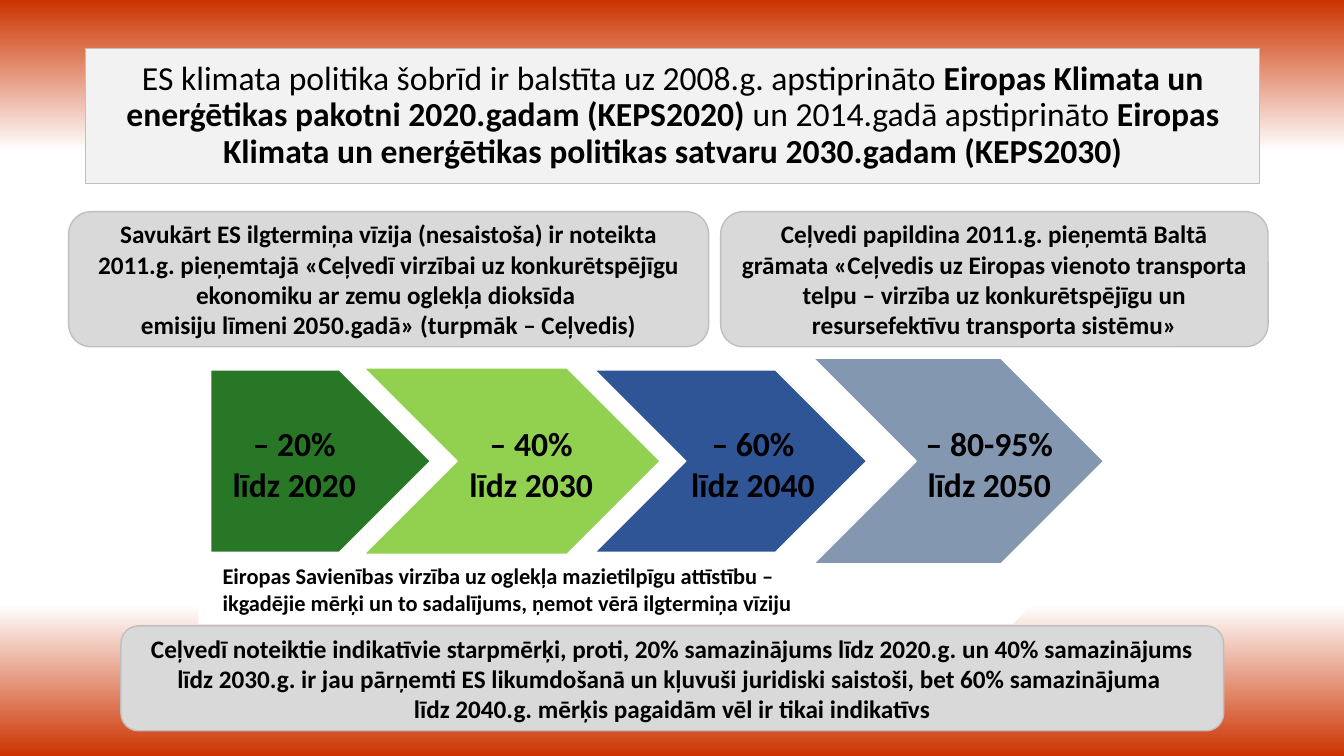
import pptx
import pptx.dml.color
import pptx.enum.shapes
import pptx.enum.text
import pptx.oxml
import pptx.oxml.ns
import pptx.util
from lxml import etree

Pt = pptx.util.Pt
qn = pptx.oxml.ns.qn
SHAPE = pptx.enum.shapes.MSO_SHAPE
ALIGN = pptx.enum.text.PP_ALIGN
ANCHOR = pptx.enum.text.MSO_ANCHOR
FIT = pptx.enum.text.MSO_AUTO_SIZE

ARROW_MIDDLE = 329.4
CARD_TOP = 151.2

TITLE_RUNS = [
    ("ES klimata politika šobrīd ir balstīta uz 2008.g. apstiprināto ", False),
    ("Eiropas Klimata un enerģētikas pakotni 2020.gadam (KEPS2020)", True),
    (" un 2014.gadā apstiprināto ", False),
    ("Eiropas Klimata un enerģētikas politikas satvaru 2030.gadam (KEPS2030)", True),
]

# Card box and its paragraphs
CARDS = [
    ((49, CARD_TOP, 457.2, 96.5), [
        "Savukārt ES ilgtermiņa vīzija (nesaistoša) ir noteikta 2011.g. pieņemtajā "
        "«Ceļvedī virzībai uz konkurētspējīgu ekonomiku ar zemu oglekļa dioksīda ",
        "emisiju līmeni 2050.gadā» (turpmāk – Ceļvedis)"]),
    ((514.8, CARD_TOP, 391, 96.5), [
        "Ceļvedi papildina 2011.g. pieņemtā Baltā grāmata «Ceļvedis uz Eiropas vienoto "
        "transporta telpu – virzība uz konkurētspējīgu un resursefektīvu transporta sistēmu»"]),
    ((86.4, 447.1, 787.7, 74.9), [
        "Ceļvedī noteiktie indikatīvie starpmērķi, proti, 20% samazinājums līdz 2020.g. "
        "un 40% samazinājums līdz 2030.g. ir jau pārņemti ES likumdošanā un kļuvuši "
        "juridiski saistoši, bet 60% samazinājuma ",
        "līdz 2040.g. mērķis pagaidām vēl ir tikai indikatīvs"]),
]

# Arrow kind, left, width, height, colour, label left, label width, target, year
STAGES = [
    (SHAPE.PENTAGON, 150.5, 157, 130.3, "277727", 154.1, 112.3, "– 20%", 2020),
    (SHAPE.CHEVRON, 259.9, 211.7, 133.2, "92D050", 323.3, 112.3, "– 40%", 2030),
    (SHAPE.CHEVRON, 424.8, 194.4, 130.3, "2F5597", 481.7, 112.3, "– 60%", 2040),
    (SHAPE.CHEVRON, 581, 207.4, 146.9, "8497B0", 646.6, 120.2, "– 80-95%", 2050),
]

CAPTION = [
    "Eiropas Savienības virzība uz oglekļa mazietilpīgu attīstību –",
    "ikgadējie mērķi un to sadalījums, ņemot vērā ilgtermiņa vīziju",
]


def rgb(value):
    return pptx.dml.color.RGBColor.from_string(value)


def paint(sp, fill, line=None, width=1):
    sp.fill.solid()
    sp.fill.fore_color.rgb = rgb(fill)
    if line:
        sp.line.color.rgb = rgb(line)
        sp.line.width = Pt(width)
    else:
        sp.line.fill.background()


def add_block(shapes, kind, box, fill, line=None):
    sp = shapes.add_shape(kind, *map(Pt, box))
    sp.shadow.inherit = False
    paint(sp, fill, line)
    return sp


def write(tf, paragraphs, size, align, spacing=None, **frame):
    """Fill a text frame; each paragraph is a list of (text, bold) runs."""
    for name, value in dict(word_wrap=True, **frame).items():
        setattr(tf, name, value)
    for i, runs in enumerate(paragraphs):
        p = tf.add_paragraph() if i else tf.paragraphs[0]
        p.alignment = align
        p.line_spacing = spacing
        for text, bold in runs:
            r = p.add_run()
            r.text = text
            for name, value in dict(name="Calibri", size=Pt(size), bold=bold).items():
                setattr(r.font, name, value)
            r.font.color.rgb = rgb("000000")


def bold_lines(lines):
    return [[(line, True)] for line in lines]


def add_label(shapes, box, lines, size, align):
    sp = shapes.add_textbox(*map(Pt, box))
    write(sp.text_frame, bold_lines(lines), size, align, auto_size=FIT.SHAPE_TO_FIT_TEXT)


def add_card(shapes, box, lines):
    sp = add_block(shapes, SHAPE.ROUNDED_RECTANGLE, box, "D9D9D9", "BFBFBF")
    write(sp.text_frame, bold_lines(lines), 18, ALIGN.CENTER, vertical_anchor=ANCHOR.MIDDLE)


def set_background(s, stops):
    fill = s.background.fill
    fill.gradient()
    fill.gradient_angle = 90
    stop_list = next(s.element.iter(qn("a:gsLst")))
    for old in list(stop_list):
        stop_list.remove(old)
    for percent, colour in stops:
        stop = etree.SubElement(stop_list, qn("a:gs"), pos=str(percent * 1000))
        etree.SubElement(stop, qn("a:srgbClr"), val=colour)


def set_title(sp, box):
    for name, value in zip(("left", "top", "width", "height"), box):
        setattr(sp, name, Pt(value))
    # Rounded outline for the placeholder
    outline = pptx.oxml.parse_xml(
        '<a:prstGeom xmlns:a="http://schemas.openxmlformats.org/drawingml/2006/main" '
        'prst="roundRect"><a:avLst><a:gd name="adj" fmla="val 18400"/></a:avLst></a:prstGeom>')
    sp.element.spPr.find(qn("a:xfrm")).addnext(outline)
    paint(sp, "F2F2F2", "BFBFBF", 0.75)
    write(sp.text_frame, [TITLE_RUNS], 24, ALIGN.CENTER, spacing=0.9,
          auto_size=FIT.NONE, vertical_anchor=ANCHOR.MIDDLE)


def add_roadmap(s):
    shapes = s.shapes.add_group_shape().shapes
    add_block(shapes, SHAPE.PENTAGON, (141.8, 255.6, 676.8, 190.1), "FFFFFF")
    for kind, left, width, height, colour, *_ in STAGES:
        box = (left, ARROW_MIDDLE - height / 2, width, height)
        add_block(shapes, kind, box, colour, "FFFFFF")
    for *_, left, width, target, year in STAGES:
        add_label(shapes, (left, 298.8, width, 65.5), [target, f"līdz {year}"], 24, ALIGN.CENTER)
    add_label(shapes, (151.9, 398.2, 579.6, 46.1), CAPTION, 16, ALIGN.LEFT)


def main():
    prs = pptx.Presentation()
    prs.slide_width, prs.slide_height = Pt(960), Pt(540)
    s = prs.slides.add_slide(prs.slide_layouts[5])
    set_background(s, [(0, "CC3300"), (20, "FFFFFF"), (80, "FFFFFF"), (100, "CC3300")])
    set_title(s.shapes.title, (61.2, 34.6, 838.8, 96.5))
    add_roadmap(s)
    for box, lines in CARDS:
        add_card(s.shapes, box, lines)
    prs.save("out.pptx")


if __name__ == "__main__":
    main()
